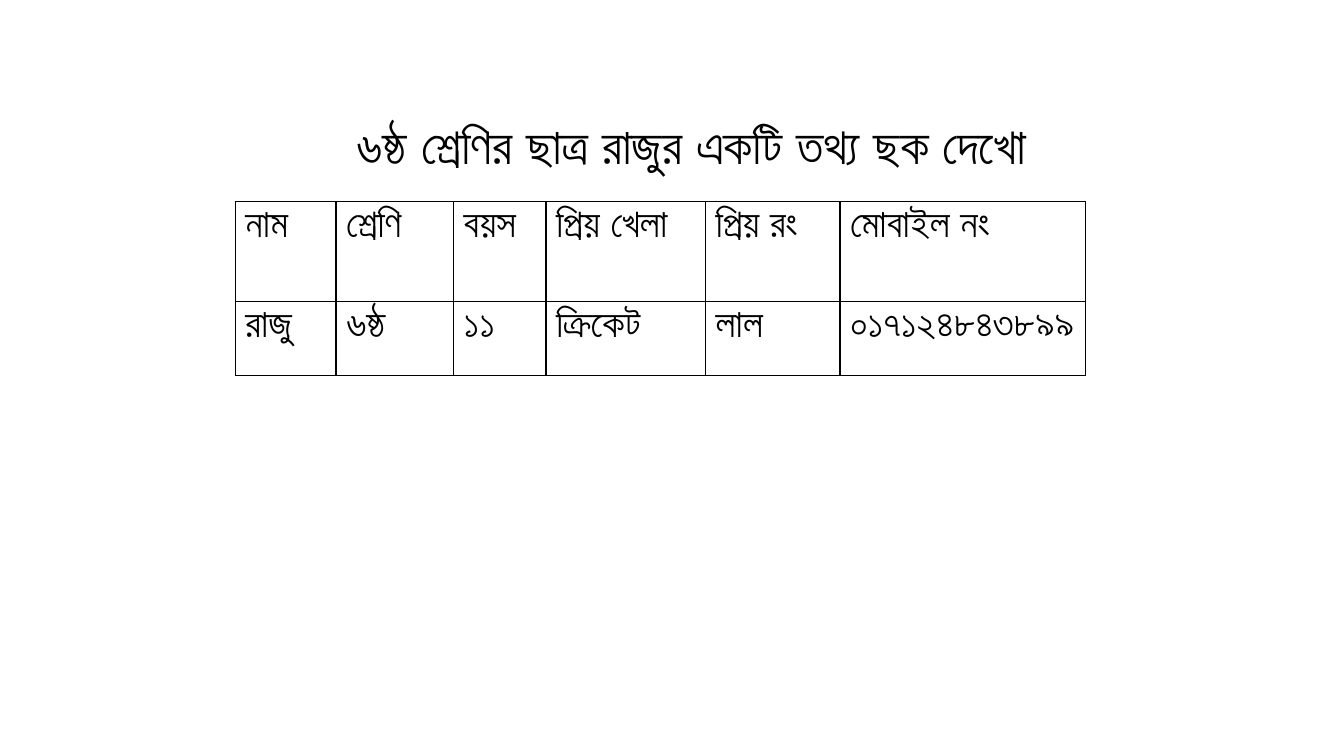
"""Build a Bengali slide showing a student's information table."""
from dataclasses import dataclass

import lxml.etree
import pptx
import pptx.dml.color
import pptx.enum.text
import pptx.oxml.ns
import pptx.util

EMU_PER_PX = 9525


@dataclass(frozen=True)
class Theme:
    font: str = "Calibri"
    ink: str = "000000"
    paper: str = "FFFFFF"
    title_pt: int = 36
    cell_pt: int = 28
    border_pt: int = 1


@dataclass(frozen=True)
class Column:
    heading: str
    value: str
    width: int


THEME = Theme()
TITLE = "৬ষ্ঠ শ্রেণির ছাত্র রাজুর একটি তথ্য ছক দেখো"
ROW_HEIGHTS = (95, 71)
COLUMNS = (
    Column("নাম", "রাজু", 96),
    Column("শ্রেণি", "৬ষ্ঠ", 112),
    Column("বয়স", "১১", 88),
    Column("প্রিয় খেলা", "ক্রিকেট", 152),
    Column("প্রিয় রং", "লাল", 128),
    Column("মোবাইল নং", "০১৭১২৪৮৪৩৮৯৯", 234),
)


def px(n: int) -> pptx.util.Emu:
    return pptx.util.Emu(n * EMU_PER_PX)


def rgb(value: str) -> pptx.dml.color.RGBColor:
    return pptx.dml.color.RGBColor.from_string(value)


def write(tf, text: str, size: int) -> None:
    tf.text = text
    for r in tf.paragraphs[0].runs:
        r.font.name = THEME.font
        r.font.size = pptx.util.Pt(size)
        r.font.bold = True
        r.font.color.rgb = rgb(THEME.ink)


def add_borders(cell) -> None:
    qn = pptx.oxml.ns.qn
    tc_pr = cell._tc.get_or_add_tcPr()
    width = str(int(pptx.util.Pt(THEME.border_pt)))
    for side in ("lnL", "lnR", "lnT", "lnB"):
        ln = lxml.etree.SubElement(tc_pr, qn(f"a:{side}"), w=width)
        fill = lxml.etree.SubElement(ln, qn("a:solidFill"))
        lxml.etree.SubElement(fill, qn("a:srgbClr"), val=THEME.ink)


def set_title(s) -> None:
    sp = s.shapes.title
    sp.left, sp.top, sp.width, sp.height = px(312), px(104), px(693), px(68)
    tf = sp.text_frame
    write(tf, TITLE, THEME.title_pt)
    tf.word_wrap = True
    tf.auto_size = pptx.enum.text.MSO_AUTO_SIZE.SHAPE_TO_FIT_TEXT
    tf.vertical_anchor = pptx.enum.text.MSO_ANCHOR.TOP
    tf.paragraphs[0].alignment = pptx.enum.text.PP_ALIGN.CENTER


def add_student_table(s) -> None:
    width = sum(column.width for column in COLUMNS)
    table = s.shapes.add_table(
        len(ROW_HEIGHTS), len(COLUMNS),
        px(224), px(192), px(width), px(sum(ROW_HEIGHTS)),
    ).table
    table.first_row = False
    table.horz_banding = False
    for row, height in zip(table.rows, ROW_HEIGHTS):
        row.height = px(height)
    for i, column in enumerate(COLUMNS):
        table.columns[i].width = px(column.width)
        for j, text in enumerate((column.heading, column.value)):
            cell = table.cell(j, i)
            write(cell.text_frame, text, THEME.cell_pt)
            add_borders(cell)
            cell.fill.background()


def main() -> None:
    prs = pptx.Presentation()
    prs.slide_width, prs.slide_height = px(1280), px(720)
    s = prs.slides.add_slide(prs.slide_layouts.get_by_name("Title Only"))
    s.background.fill.solid()
    s.background.fill.fore_color.rgb = rgb(THEME.paper)
    set_title(s)
    add_student_table(s)
    prs.save("out.pptx")


if __name__ == "__main__":
    main()
